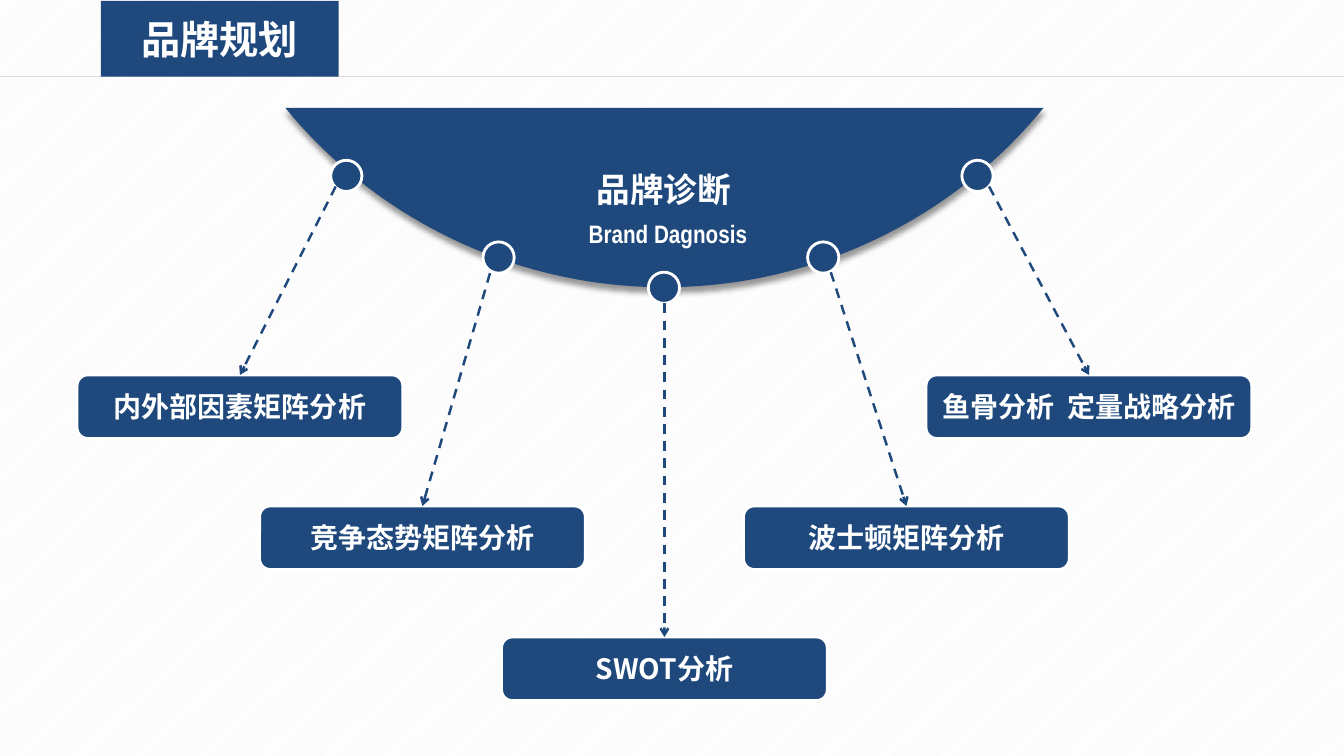
from lxml import etree
from pptx import Presentation
from pptx.dml.color import RGBColor
from pptx.enum.dml import MSO_LINE, MSO_PATTERN
from pptx.enum.shapes import MSO_CONNECTOR, MSO_SHAPE
from pptx.enum.text import MSO_ANCHOR, PP_ALIGN
from pptx.oxml.ns import qn
from pptx.util import Inches, Pt

NAVY = RGBColor(0x1F, 0x49, 0x7D)
WHITE = RGBColor(0xFF, 0xFF, 0xFF)
STRIPE = RGBColor(0xF2, 0xF2, 0xF2)
RULE_GRAY = RGBColor(0xBF, 0xBF, 0xBF)

RECTANGLE = MSO_SHAPE.RECTANGLE
ROUNDED = MSO_SHAPE.ROUNDED_RECTANGLE
OVAL = MSO_SHAPE.OVAL
STRAIGHT = MSO_CONNECTOR.STRAIGHT
DASH = MSO_LINE.DASH
DIAGONAL = MSO_PATTERN.DARK_UPWARD_DIAGONAL
CENTER = PP_ALIGN.CENTER
MIDDLE = MSO_ANCHOR.MIDDLE

CJK_FONT = "Noto Sans CJK SC"
SLIDE_WIDTH, SLIDE_HEIGHT = 13.33, 7.5
DOT_SIZE = 0.31
LABEL_WIDTH, LABEL_HEIGHT = 3.23, 0.63
FIRST_ROW, ROW_STEP = 3.72, 1.3

# Label, label centre, row, dot left and top, arrow start
METHODS = [
    ("内外部因素矩阵分析", 2.38, 0, (3.28, 1.59), (3.33, 1.85)),
    ("竞争态势矩阵分析", 4.19, 1, (4.79, 2.4), (4.86, 2.71)),
    ("SWOT分析", 6.59, 2, (6.43, 2.7), (6.59, 3.01)),
    ("波士顿矩阵分析", 8.99, 1, (8.01, 2.4), (8.24, 2.7)),
    ("鱼骨分析  定量战略分析", 10.8, 0, (9.54, 1.59), (9.81, 1.85)),
]


def style_shape(shape, outlined):
    shape.fill.solid()
    shape.fill.fore_color.rgb = NAVY
    if outlined:
        shape.line.color.rgb = WHITE
        shape.line.width = Pt(2)
    else:
        shape.line.fill.background()
    shape.shadow.inherit = False


def add_preset(slide, preset, left, top, width, height, outlined=True):
    shape = slide.shapes.add_shape(
        preset, Inches(left), Inches(top), Inches(width), Inches(height))
    style_shape(shape, outlined)
    return shape


def write_text(shape, text, size, font_name=CJK_FONT):
    frame = shape.text_frame
    frame.word_wrap = True
    paragraph = frame.paragraphs[0]
    paragraph.alignment = CENTER
    run = paragraph.add_run()
    run.text = text
    run.font.size = Pt(size)
    run.font.bold = True
    run.font.name = font_name
    run.font.color.rgb = WHITE
    east_asian = etree.Element(qn("a:ea"), typeface=CJK_FONT)
    run.font._element.find(qn("a:latin")).addnext(east_asian)


def add_line(slide, start, end, color, width):
    points = [Inches(value) for value in (*start, *end)]
    line = slide.shapes.add_connector(STRAIGHT, *points)
    line.line.color.rgb = color
    line.line.width = Pt(width)
    etree.SubElement(line._element.spPr, qn("a:effectLst"))
    return line


def add_header(slide, left, top, width, height):
    # Thin half-transparent rule under the title block
    bottom = top + height
    rule = add_line(slide, (0, bottom), (SLIDE_WIDTH, bottom), RULE_GRAY, 0.75)
    color = next(rule._element.spPr.iter(qn("a:srgbClr")))
    etree.SubElement(color, qn("a:alpha"), val="50000")
    title = add_preset(slide, RECTANGLE, left, top, width, height, outlined=False)
    title.text_frame.vertical_anchor = MIDDLE
    write_text(title, "品牌规划", 28)


def curve_points(start, control_1, control_2, end, steps=40):
    """Points along a cubic Bezier curve, after its start."""
    for step in range(1, steps + 1):
        t = step / steps
        weights = ((1 - t) ** 3, 3 * t * (1 - t) ** 2, 3 * t * t * (1 - t), t ** 3)
        yield tuple(
            Inches(sum(w * v for w, v in zip(weights, values)))
            for values in zip(start, control_1, control_2, end))


def add_bowl(slide, left, top, width, height):
    right, bottom, middle = left + width, top + height, left + width / 2
    inner, outer = 0.2 * width, 0.118 * width
    depth = top + 0.61 * height
    # Flat top edge, then two mirrored curves
    builder = slide.shapes.build_freeform(Inches(left), Inches(top), scale=1.0)
    builder.add_line_segments([(Inches(right), Inches(top))], close=False)
    builder.add_line_segments(curve_points(
        (right, top), (right - outer, depth), (middle + inner, bottom),
        (middle, bottom)), close=False)
    builder.add_line_segments(curve_points(
        (middle, bottom), (middle - inner, bottom), (left + outer, depth),
        (left, top)), close=True)
    bowl = builder.convert_to_shape()
    style_shape(bowl, outlined=False)

    # Soft shadow straight below
    effects = bowl._element.spPr.find(qn("a:effectLst"))
    shadow = etree.SubElement(
        effects, qn("a:outerShdw"), blurRad=str(Pt(4)), dist=str(Pt(3)),
        dir="5400000", algn="t", rotWithShape="0")
    color = etree.SubElement(shadow, qn("a:srgbClr"), val="000000")
    etree.SubElement(color, qn("a:alpha"), val="40000")

    # Captions inside the bowl
    captions = [("品牌诊断", 24, "Calibri", -0.91, 0.56, 0.5),
                ("Brand Dagnosis", 18, "Arial Narrow", -0.87, 1.05, 0.4)]
    for text, size, font_name, shift, drop, box_height in captions:
        box = slide.shapes.add_textbox(
            Inches(middle + shift), Inches(top + drop),
            Inches(1.81), Inches(box_height))
        write_text(box, text, size, font_name)


def add_method(slide, text, center, top, dot, arrow_start):
    label = add_preset(slide, ROUNDED, center - LABEL_WIDTH / 2, top,
                       LABEL_WIDTH, LABEL_HEIGHT)
    label.text_frame.vertical_anchor = MIDDLE
    write_text(label, text, 20)
    add_preset(slide, OVAL, *dot, DOT_SIZE, DOT_SIZE)
    arrow = add_line(slide, arrow_start, (center, top), NAVY, 1.75)
    arrow.line.dash_style = DASH
    etree.SubElement(arrow.line._get_or_add_ln(), qn("a:tailEnd"), type="arrow")


def main():
    presentation = Presentation()
    presentation.slide_width = Inches(SLIDE_WIDTH)
    presentation.slide_height = Inches(SLIDE_HEIGHT)
    slide = presentation.slides.add_slide(presentation.slide_layouts[6])

    # Striped background
    background = slide.background.fill
    background.patterned()
    background.pattern = DIAGONAL
    background.fore_color.rgb = STRIPE
    background.back_color.rgb = WHITE

    add_header(slide, 1, 0.01, 2.36, 0.75)
    add_bowl(slide, 2.83, 1.07, 7.52, 1.78)
    for text, center, row, dot, arrow_start in METHODS:
        add_method(slide, text, center, FIRST_ROW + row * ROW_STEP, dot, arrow_start)

    presentation.save("out.pptx")


if __name__ == "__main__":
    main()
